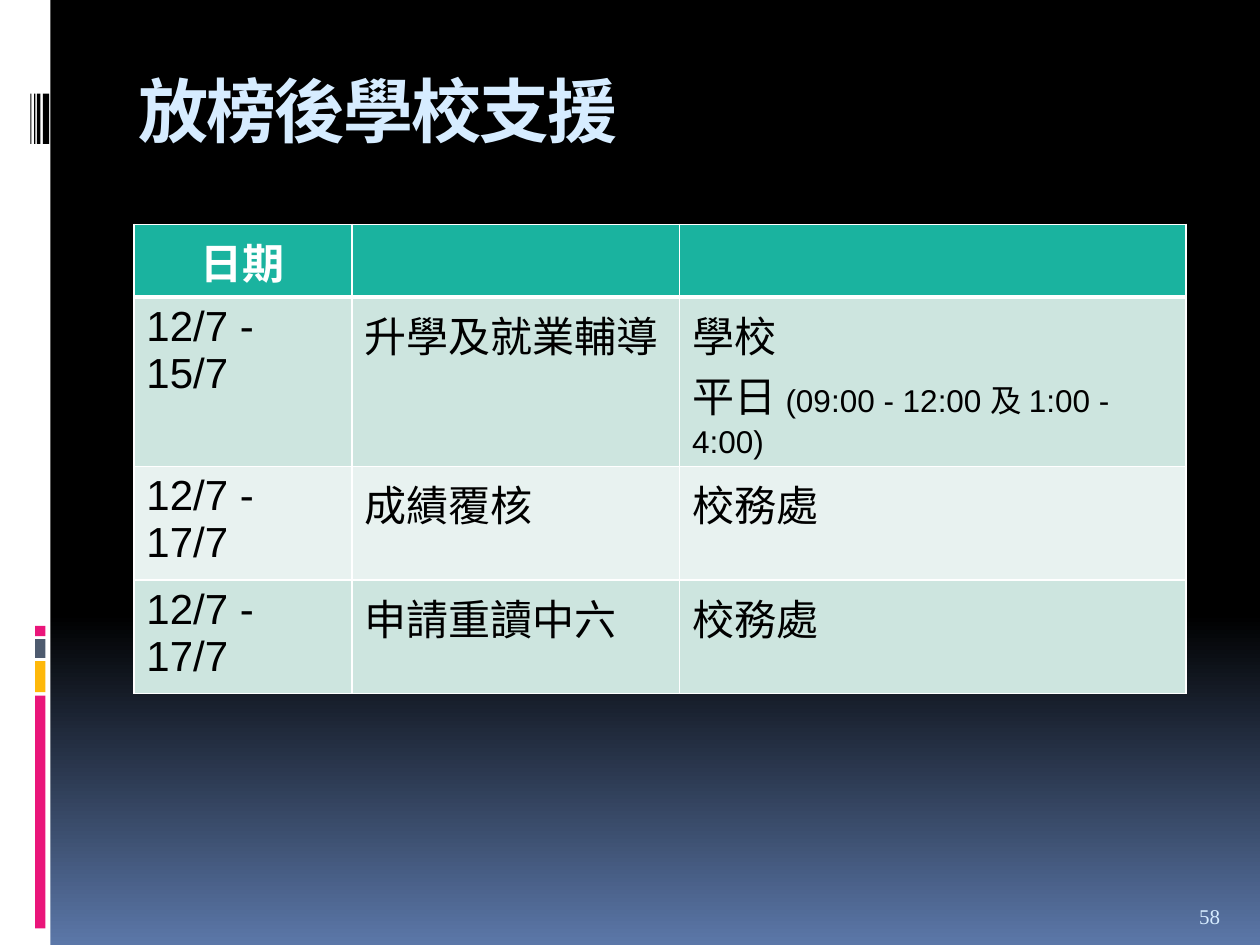
from lxml import etree
from pptx import Presentation
from pptx.dml.color import RGBColor
from pptx.enum.shapes import MSO_SHAPE
from pptx.enum.text import MSO_ANCHOR, MSO_AUTO_SIZE, PP_ALIGN
from pptx.oxml.ns import qn
from pptx.util import Pt

RECTANGLE = MSO_SHAPE.RECTANGLE
TOP, BOTTOM = MSO_ANCHOR.TOP, MSO_ANCHOR.BOTTOM
LEFT, CENTER = PP_ALIGN.LEFT, PP_ALIGN.CENTER
TITLE_ONLY = 5

COLORS = {
    "black": "000000", "white": "FFFFFF", "blue": "5B77A8", "pale": "D6ECFF",
    "pink": "EA157A", "amber": "FEB80A", "slate": "4E5B6F",
    "header": "1AB39F", "band": "CDE5DF", "light": "E8F2F0",
}

# left, top, width, height, color
BARS = [
    (0, 0, 28.8, 540, "white"),
    (20.1, 397.5, 5.8, 133.1, "pink"),
    (20.1, 377.8, 5.8, 17.8, "amber"),
    (20.1, 365.2, 5.8, 10.8, "slate"),
    (20.1, 357.7, 5.8, 5.8, "pink"),
    (24.5, 53.5, 3.6, 28.8, "black"),
    (21.1, 53.5, 2, 28.8, "black"),
    (19.5, 53.5, 0.8, 28.8, "black"),
    (17.4, 53.5, 0.6, 28.8, "black"),
]

# Each cell is a list of paragraphs, each paragraph a list of (text, size)
ROWS = [
    [[[("日期", 24)]], [], []],
    [[[("12/7 - 15/7", 24)]], [[("升學及就業輔導", 24)]],
     [[("學校", 24)],
      [("平日 ", 24), ("(09:00 - 12:00 及 1:00 - 4:00)", 18)]]],
    [[[("12/7 - 17/7", 24)]], [[("成績覆核", 24)]], [[("校務處", 24)]]],
    [[[("12/7 - 17/7", 24)]], [[("申請重讀中六", 24)]], [[("校務處", 24)]]],
]
ROW_FILLS = ["header", "band", "light", "band"]
ROW_HEIGHTS = [41.5, 97, 61, 61]
COLUMN_WIDTHS = [124.6, 187.2, 289.4]


def color(name):
    return RGBColor.from_string(COLORS[name])


def add_run(paragraph, text, size, color_name, font="Arial", bold=False):
    run = paragraph.add_run()
    run.text = text
    run.font.name = font
    run.font.size = Pt(size)
    run.font.bold = bold
    run.font.color.rgb = color(color_name)
    return run


def set_background(slide):
    fill = slide.background.fill
    fill.gradient()
    fill.gradient_angle = 270
    for stop, position, name in zip(fill.gradient_stops, (0.65, 1), ("black", "blue")):
        stop.position = position
        stop.color.rgb = color(name)


def add_bar(slide, left, top, width, height, color_name):
    bar = slide.shapes.add_shape(RECTANGLE, Pt(left), Pt(top), Pt(width), Pt(height))
    bar.shadow.inherit = False
    bar.fill.solid()
    bar.fill.fore_color.rgb = color(color_name)
    bar.line.fill.background()


def set_title(slide, text):
    title = slide.shapes.title
    title.left, title.top, title.width, title.height = Pt(72), Pt(40.3), Pt(612), Pt(72)
    frame = title.text_frame
    frame.auto_size = MSO_AUTO_SIZE.NONE
    frame.vertical_anchor = TOP
    paragraph = frame.paragraphs[0]
    paragraph.alignment = LEFT
    paragraph.line_spacing = 0.9
    run = add_run(paragraph, text, 40, "pale", bold=True)
    run._r.get_or_add_rPr().set("spc", "-100")


def add_slide_number(slide, text):
    box = slide.shapes.add_textbox(Pt(678.2), Pt(505.4), Pt(36), Pt(28.8))
    frame = box.text_frame
    frame.word_wrap = True
    frame.vertical_anchor = BOTTOM
    add_run(frame.paragraphs[0], text, 12, "pale", font="Times New Roman")


def set_borders(cell, top, bottom):
    properties = cell._tc.get_or_add_tcPr()
    for side, width in (("L", 1), ("R", 1), ("T", top), ("B", bottom)):
        line = etree.SubElement(properties, qn(f"a:ln{side}"), w=str(Pt(width)))
        fill = etree.SubElement(line, qn("a:solidFill"))
        etree.SubElement(fill, qn("a:srgbClr"), val=COLORS["white"])


def fill_cell(cell, paragraphs, row_index):
    is_header = row_index == 0
    # A thick rule separates the header from the first row
    set_borders(cell, 3 if row_index == 1 else 1, 3 if is_header else 1)
    cell.fill.solid()
    cell.fill.fore_color.rgb = color(ROW_FILLS[row_index])
    frame = cell.text_frame
    for index, runs in enumerate(paragraphs):
        paragraph = frame.add_paragraph() if index else frame.paragraphs[0]
        paragraph.alignment = CENTER if is_header else LEFT
        for text, size in runs:
            add_run(paragraph, text, size, "white" if is_header else "black",
                    bold=is_header)


def add_schedule(slide):
    table = slide.shapes.add_table(
        len(ROWS), len(COLUMN_WIDTHS), Pt(76.5), Pt(128.2),
        Pt(sum(COLUMN_WIDTHS)), Pt(sum(ROW_HEIGHTS))).table
    for column, width in zip(table.columns, COLUMN_WIDTHS):
        column.width = Pt(width)
    for row_index, cells in enumerate(ROWS):
        table.rows[row_index].height = Pt(ROW_HEIGHTS[row_index])
        for column_index, paragraphs in enumerate(cells):
            fill_cell(table.cell(row_index, column_index), paragraphs, row_index)


def main():
    presentation = Presentation()
    presentation.slide_width, presentation.slide_height = Pt(720), Pt(540)
    slide = presentation.slides.add_slide(presentation.slide_layouts[TITLE_ONLY])

    # Background and side decoration
    set_background(slide)
    for bar in BARS:
        add_bar(slide, *bar)

    # Content
    set_title(slide, "放榜後學校支援")
    add_slide_number(slide, "58")
    add_schedule(slide)
    presentation.save("out.pptx")


if __name__ == "__main__":
    main()
